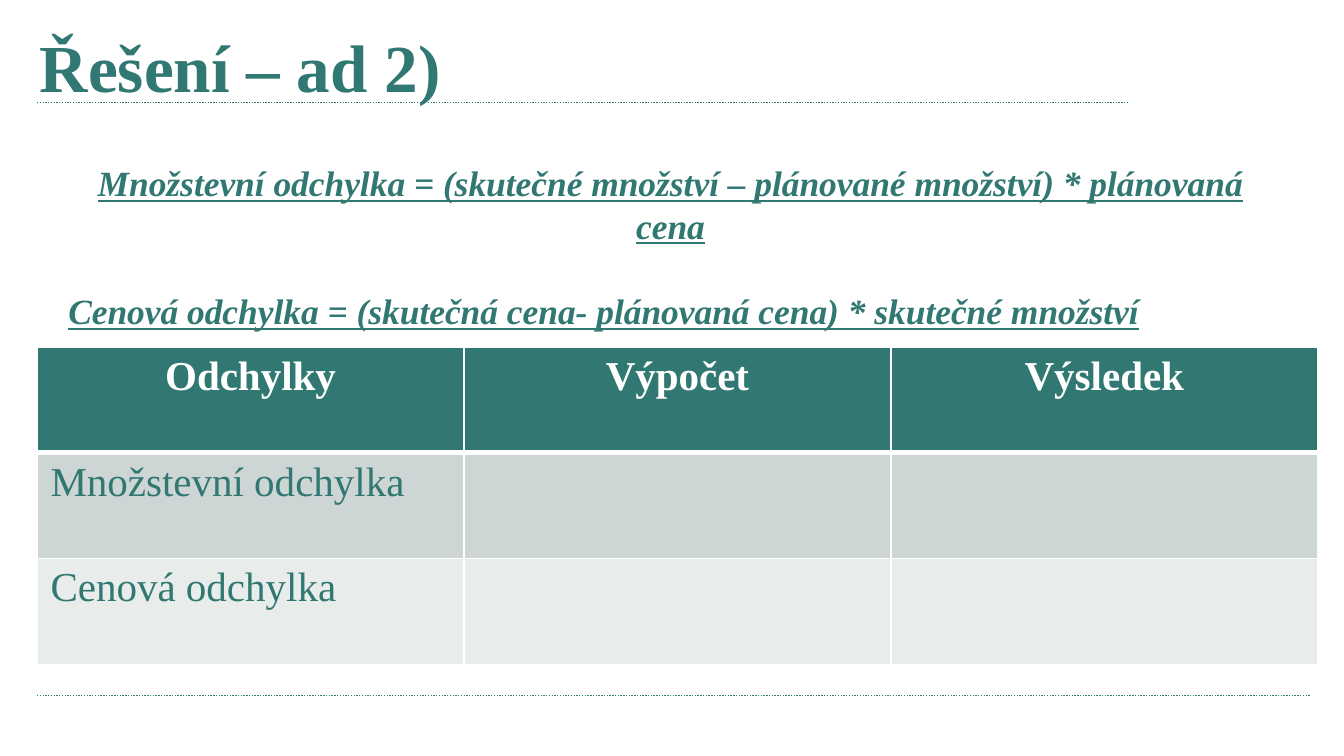
import pptx
import pptx.util
import pptx.dml.color
import pptx.enum.dml
import pptx.enum.shapes
import pptx.enum.text
import pptx.oxml
import pptx.oxml.ns

ALIGN = pptx.enum.text.PP_ALIGN
TEAL = "307871"
WHITE = "FFFFFF"
BANDS = ["CDD6D5", "E8ECEB"]


def color(value):
    return pptx.dml.color.RGBColor.from_string(value)


def write(paragraph, text, size, fill=TEAL, align=ALIGN.LEFT, bold=False,
          italic=False, underline=False, pitch=None, before=0):
    paragraph.alignment = align
    paragraph.space_before = pptx.util.Pt(before)
    if pitch:
        paragraph.line_spacing = pptx.util.Pt(pitch)
    run = paragraph.add_run()
    run.text = text
    font = run.font
    font.name = "Times New Roman"
    font.size = pptx.util.Pt(size)
    font.bold = bold
    font.italic = italic
    font.underline = underline
    font.color.rgb = color(fill)


class SlideBuilder:
    def __init__(self, presentation):
        self.width = presentation.slide_width
        self.height = presentation.slide_height
        self.slide = presentation.slides.add_slide(presentation.slide_layouts[6])

    def across(self, percent):
        return round(self.width * percent / 100)

    def down(self, percent):
        return round(self.height * percent / 100)

    def area(self, left, top, width, height):
        return self.across(left), self.down(top), self.across(width), self.down(height)

    def rule(self, left, right, top):
        connector = self.slide.shapes.add_connector(
            pptx.enum.shapes.MSO_CONNECTOR.STRAIGHT,
            self.across(left), self.down(top), self.across(right), self.down(top))
        connector.line.color.rgb = color(TEAL)
        connector.line.width = pptx.util.Pt(0.75)
        connector.line.dash_style = pptx.enum.dml.MSO_LINE.ROUND_DOT
        properties = connector.element.spPr
        properties.append(properties.makeelement(pptx.oxml.ns.qn("a:effectLst")))

    def text(self, area, paragraphs, inset=0.05, **style):
        frame = self.slide.shapes.add_textbox(*self.area(*area)).text_frame
        frame.word_wrap = True
        frame.margin_top = pptx.util.Inches(inset)
        for index, (text, extra) in enumerate(paragraphs):
            paragraph = frame.add_paragraph() if index else frame.paragraphs[0]
            write(paragraph, text, **style, **extra)

    def border(self, cell, widths):
        properties = cell._tc.get_or_add_tcPr()
        for index, (side, width) in enumerate(widths.items()):
            line = pptx.oxml.parse_xml(
                f'<a:ln{side} {pptx.oxml.ns.nsdecls("a")} w="{pptx.util.Pt(width)}">'
                f'<a:solidFill><a:srgbClr val="{WHITE}"/></a:solidFill></a:ln{side}>')
            properties.insert(index, line)

    def table(self, area, headings, labels, size):
        rows = [headings] + [[label] + [""] * (len(headings) - 1) for label in labels]
        table = self.slide.shapes.add_table(
            len(rows), len(headings), *self.area(*area)).table
        for row, texts in enumerate(rows):
            header = row == 0
            for column, text in enumerate(texts):
                cell = table.cell(row, column)
                cell.fill.solid()
                cell.fill.fore_color.rgb = color(TEAL if header else BANDS[(row - 1) % 2])
                self.border(cell, {"L": 1, "R": 1, "T": 3 if row == 1 else 1,
                                   "B": 3 if header else 1})
                if text:
                    write(cell.text_frame.paragraphs[0], text, size, bold=header,
                          fill=WHITE if header else TEAL,
                          align=ALIGN.CENTER if header else ALIGN.LEFT)


def main():
    presentation = pptx.Presentation()
    presentation.slide_width = pptx.util.Inches(10)
    presentation.slide_height = presentation.slide_width * 9 // 16
    builder = SlideBuilder(presentation)
    builder.rule(2.76, 83.85, 13.6)
    builder.rule(2.76, 97.45, 92)
    builder.text((1.96, 2.5, 88.2, 14), [("Řešení – ad 2)", {})], size=36, bold=True)
    formulas = [
        ("Množstevní odchylka = (skutečné množství – plánované množství) * plánovaná cena",
         {"align": ALIGN.CENTER}),
        ("Cenová odchylka = (skutečná cena- plánovaná cena) * skutečné množství",
         {"before": 23}),
    ]
    builder.text((4.1, 15.3, 91.6, 62.3), formulas, inset=0.34, size=19,
                 bold=True, italic=True, underline=True, pitch=22.8)
    builder.table((2.76, 45.9, 95.3, 42), ["Odchylky", "Výpočet", "Výsledek"],
                  ["Množstevní odchylka", "Cenová odchylka"], size=22)
    presentation.save("out.pptx")


if __name__ == "__main__":
    main()
